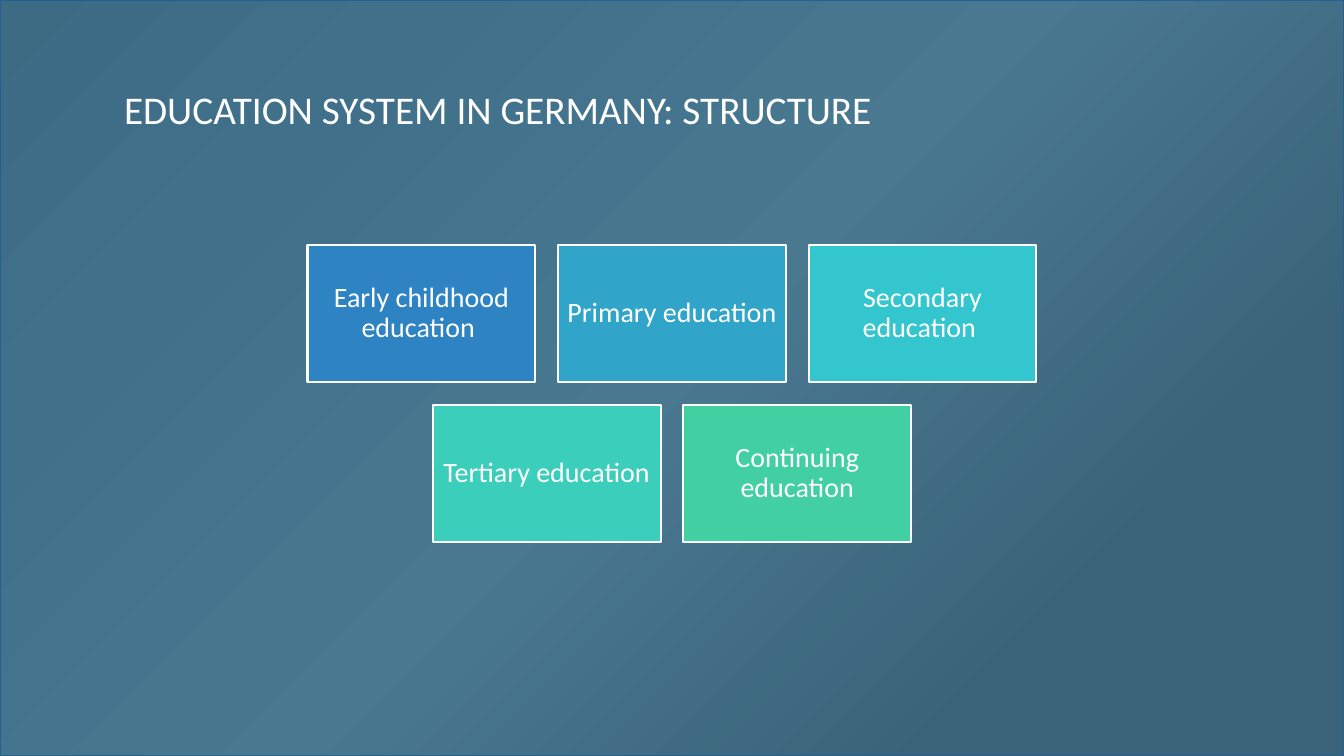
from lxml import etree
from pptx import Presentation
from pptx.dml.color import RGBColor
from pptx.enum.shapes import MSO_SHAPE
from pptx.enum.text import MSO_ANCHOR, MSO_AUTO_SIZE, PP_ALIGN
from pptx.oxml.ns import qn
from pptx.util import Inches, Pt

RECTANGLE = MSO_SHAPE.RECTANGLE
MIDDLE = MSO_ANCHOR.MIDDLE
LEFT, CENTER = PP_ALIGN.LEFT, PP_ALIGN.CENTER
NO_AUTOFIT = MSO_AUTO_SIZE.NONE

PAGE_WIDTH, PAGE_HEIGHT = 13.33, 7.5
FONT, WHITE = "Calibri", "FFFFFF"
BACKGROUND_STOPS = [(0, "265068"), (21, "2A5872"), (50, "3A667E"),
                    (80, "1F4255"), (99, "1F4255")]
BOX_WIDTH, BOX_HEIGHT, BOX_GAP = 2.26, 1.36, 0.225
ROWS_TOP = 2.43
STAGE_ROWS = [
    [("Early childhood education ", "2E83C3"),
     ("Primary education ", "30A4C9"),
     ("Secondary education ", "34C6CE")],
    [("Tertiary education ", "3BCFBB"),
     ("Continuing education", "42D0A2")],
]


def color(value):
    """Turn a hex string into a colour."""
    return RGBColor.from_string(value)


def set_background(page):
    """Fill the page background with the diagonal gradient."""
    fill = page.background.fill
    fill.gradient()
    fill.gradient_angle = 315
    stops = page.background._cSld.find(".//" + qn("a:gsLst"))
    for stop in list(stops):
        stops.remove(stop)
    for position, value in BACKGROUND_STOPS:
        stop = etree.SubElement(stops, qn("a:gs"), pos=str(position * 1000))
        etree.SubElement(stop, qn("a:srgbClr"), val=value)


def add_rectangle(page, left, top, width, height, fill, line):
    """Add a flat rectangle with a solid fill and a thin outline."""
    box = page.shapes.add_shape(RECTANGLE, Inches(left), Inches(top),
                                Inches(width), Inches(height))
    box.shadow.inherit = False
    box.fill.solid()
    box.fill.fore_color.rgb = color(fill)
    box.line.color.rgb = color(line)
    box.line.width = Pt(1.5)
    return box


def add_overlay(page):
    """Cover the page with a translucent tint."""
    overlay = add_rectangle(page, 0, 0, PAGE_WIDTH, PAGE_HEIGHT, "6193AD", "226292")
    tint = overlay.fill._xPr.find(qn("a:solidFill"))[0]
    etree.SubElement(tint, qn("a:alpha"), val="41000")
    page.shapes._spTree.insert(2, overlay._element)


def write_text(shape, text, size, alignment):
    """Write one white paragraph, centred vertically in the shape."""
    frame = shape.text_frame
    frame.word_wrap = True
    frame.auto_size = NO_AUTOFIT
    frame.vertical_anchor = MIDDLE
    para = frame.paragraphs[0]
    para.text = text
    para.alignment = alignment
    para.line_spacing = 0.9
    para.font.name = FONT
    para.font.size = Pt(size)
    para.font.color.rgb = color(WHITE)


def add_title(page, text):
    """Place and format the title placeholder."""
    title = page.shapes.title
    title.left, title.top = Inches(1.13), Inches(0.7)
    title.width, title.height = Inches(12.2), Inches(0.82)
    write_text(title, text, 28, LEFT)


def add_stage(page, left, top, text, fill):
    """Add one labelled stage of the education system."""
    box = add_rectangle(page, left, top, BOX_WIDTH, BOX_HEIGHT, fill, WHITE)
    frame = box.text_frame
    frame.margin_left = frame.margin_right = Inches(0.08)
    frame.margin_top = frame.margin_bottom = Inches(0.08)
    write_text(box, text, 20, CENTER)


def add_stage_rows(page):
    """Lay out the stages in rows centred on the page."""
    step = BOX_WIDTH + BOX_GAP
    for row, stages in enumerate(STAGE_ROWS):
        row_left = (PAGE_WIDTH - len(stages) * step + BOX_GAP) / 2
        top = ROWS_TOP + row * (BOX_HEIGHT + BOX_GAP)
        for column, (text, fill) in enumerate(stages):
            add_stage(page, row_left + column * step, top, text, fill)


def main():
    """Build and save the deck."""
    deck = Presentation()
    deck.slide_width, deck.slide_height = Inches(PAGE_WIDTH), Inches(PAGE_HEIGHT)
    page = deck.slides.add_slide(deck.slide_layouts[5])
    set_background(page)
    add_overlay(page)
    add_title(page, "EDUCATION SYSTEM IN GERMANY: STRUCTURE")
    add_stage_rows(page)
    deck.save("out.pptx")


if __name__ == "__main__":
    main()
